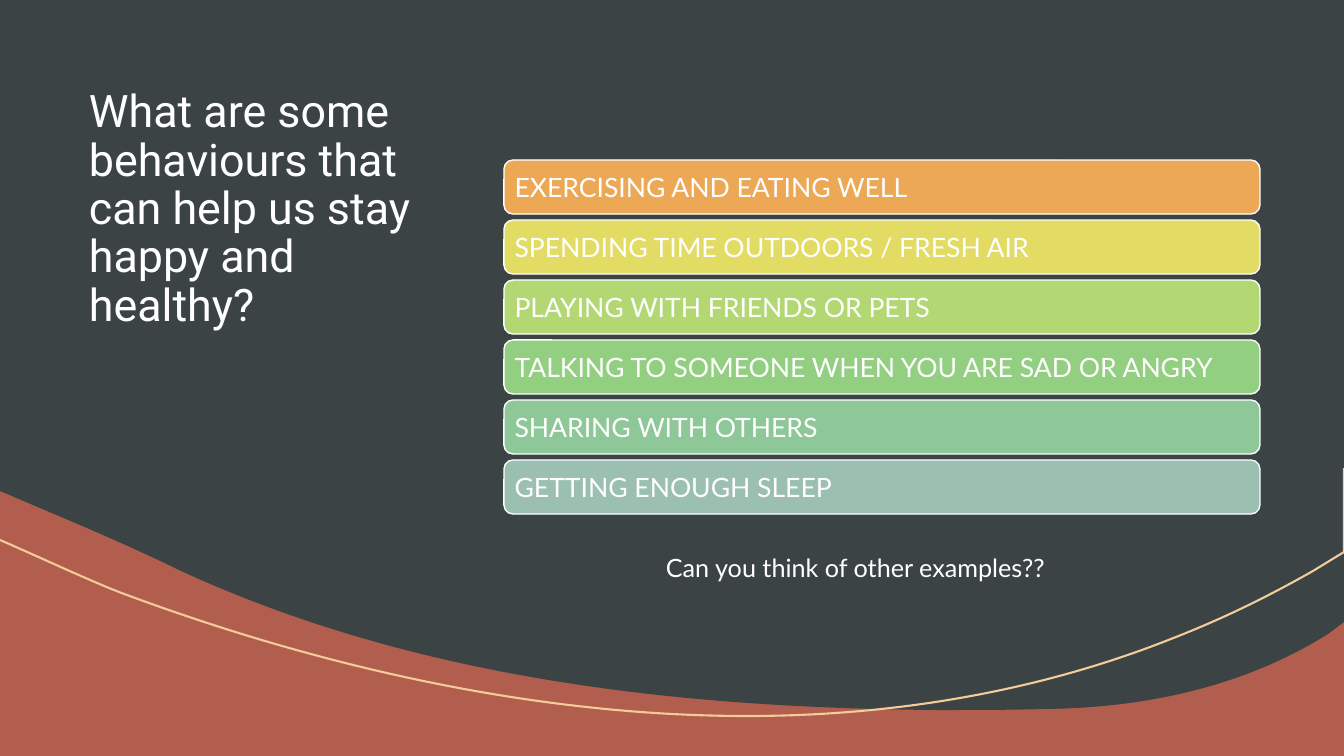
from dataclasses import dataclass

from lxml.etree import SubElement
from pptx import Presentation
from pptx.dml.color import RGBColor
from pptx.enum.shapes import MSO_SHAPE
from pptx.enum.text import MSO_ANCHOR, PP_ALIGN
from pptx.oxml.ns import qn
from pptx.util import Pt

PX = 914400 / 100.8


@dataclass(frozen=True)
class Theme:
    clay: str = "B15E4E"
    slate: str = "3B4345"
    sand: str = "F4CB99"
    white: str = "FFFFFF"
    bars: tuple = ("ECA855", "E2DC64", "B3D873", "93CF81", "8EC798", "9BBFB0")
    title_font: str = "Roboto"
    body_font: str = "Lato"
    title_size: int = 32
    bar_size: int = 19
    prompt_size: int = 18


theme = Theme()


def write(shape, text, font, size):
    frame = shape.text_frame
    frame.word_wrap = True
    paragraph = frame.paragraphs[0]
    paragraph.text = text
    paragraph.alignment = PP_ALIGN.LEFT
    paragraph.font.name = font
    paragraph.font.size = Pt(size)
    paragraph.font.color.rgb = RGBColor.from_string(theme.white)
    return frame


def add_curve(start, segments, close):
    anchors = [segment[-1] for segment in segments]
    builder = slide.shapes.build_freeform(*start, scale=PX)
    builder.add_line_segments(anchors, close=close)
    curve = builder.convert_to_shape()
    curve.shadow.inherit = False
    left = min(x for x, y in [start, *anchors])
    top = min(y for x, y in [start, *anchors])
    edges = list(curve.element.iter(qn("a:lnTo")))
    for edge, segment in zip(edges, segments):
        if len(segment) == 3:
            edge.clear()
            bezier = SubElement(edge.getparent(), qn("a:cubicBezTo"))
            for x, y in segment:
                SubElement(bezier, qn("a:pt"), x=str(x - left), y=str(y - top))
            edge.getparent().replace(edge, bezier)
    return curve


presentation = Presentation()
presentation.slide_width = round(1344 * PX)
presentation.slide_height = round(756 * PX)
slide = presentation.slides.add_slide(presentation.slide_layouts[6])
slide.background.fill.solid()
slide.background.fill.fore_color.rgb = RGBColor.from_string(theme.clay)

backdrop = add_curve((0, 0), [
    [(1344, 0)],
    [(1344, 622)],
    [(1328, 634)],
    [(1242, 688), (1142, 708), (1045, 709)],
    [(1010, 710), (974, 710), (937, 710)],
    [(682, 708), (417, 680), (179, 570)],
    [(136, 549), (92, 530), (47, 511)],
    [(0, 491)],
], close=True)
backdrop.fill.solid()
backdrop.fill.fore_color.rgb = RGBColor.from_string(theme.slate)
backdrop.line.fill.background()

swoosh = add_curve((1344, 468), [
    [(1344, 552)],
    [(1313, 571)],
    [(1274, 593), (1230, 616), (1171, 639)],
    [(1037, 692), (893, 716), (747, 716)],
    [(540, 716), (327, 669), (127, 595)],
    [(99, 585), (37, 556), (0, 540)],
], close=False)
swoosh.fill.background()
swoosh.line.color.rgb = RGBColor.from_string(theme.sand)
swoosh.line.width = Pt(1.5)

question = slide.shapes.add_textbox(*(round(v * PX) for v in (79, 84, 397, 323)))
question_frame = write(question,
                       "What are some behaviours that can help us stay happy and healthy?",
                       theme.title_font, theme.title_size)
question_frame.paragraphs[0].line_spacing = 0.9

behaviours = (
    "EXERCISING AND EATING WELL",
    "SPENDING TIME OUTDOORS / FRESH AIR",
    "PLAYING WITH FRIENDS OR PETS",
    "TALKING TO SOMEONE WHEN YOU ARE SAD OR ANGRY",
    "SHARING WITH OTHERS",
    "GETTING ENOUGH SLEEP",
)
for row, (behaviour, color) in enumerate(zip(behaviours, theme.bars)):
    bar = slide.shapes.add_shape(MSO_SHAPE.ROUNDED_RECTANGLE,
                                 *(round(v * PX) for v in (504, 160 + 60 * row, 756, 54)))
    bar.shadow.inherit = False
    bar.fill.solid()
    bar.fill.fore_color.rgb = RGBColor.from_string(color)
    bar.line.color.rgb = RGBColor.from_string(theme.white)
    bar.line.width = Pt(1)
    bar_frame = write(bar, behaviour, theme.body_font, theme.bar_size)
    bar_frame.vertical_anchor = MSO_ANCHOR.MIDDLE
    bar_frame.margin_left = bar_frame.margin_right = round(8 * PX)

prompt = slide.shapes.add_textbox(*(round(v * PX) for v in (656, 547, 515, 40)))
write(prompt, "Can you think of other examples??", theme.body_font, theme.prompt_size)

presentation.save("out.pptx")
